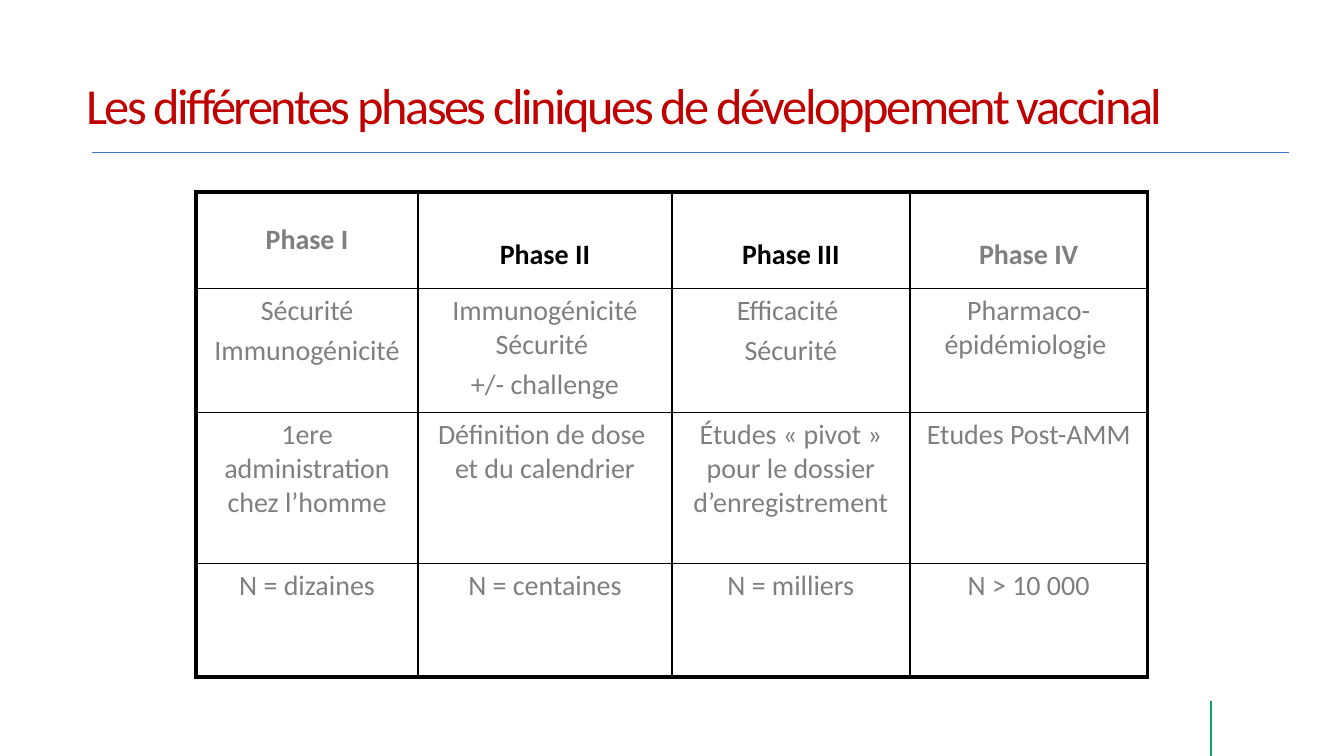
from lxml import etree
from pptx import Presentation, util as u
from pptx.dml.color import RGBColor
from pptx.enum import shapes, text
from pptx.oxml import ns

INK = {"red": "C00000", "gray": "7F7F7F", "black": "000000",
       "blue": "4472C4", "green": "15A160"}
ROWS = [
    [["Phase I"], ["Phase II"], ["Phase III"], ["Phase IV"]],
    [["Sécurité", "Immunogénicité"], ["Immunogénicité Sécurité ", "+/- challenge"],
     ["Efficacité ", "Sécurité"], ["Pharmaco-épidémiologie "]],
    [["1ere administration chez l’homme"], ["Définition de dose  et du calendrier"],
     ["Études « pivot » pour le dossier d’enregistrement"], ["Etudes Post-AMM"]],
    [["N = dizaines"], ["N = centaines"], ["N = milliers"], ["N > 10 000"]],
]


def write(frame, lines, size=15, ink="gray", bold=False, side="CENTER",
          gap=3, lead=1, track=0):
    for n, line in enumerate(lines):
        par = frame.paragraphs[0] if n == 0 else frame.add_paragraph()
        par.alignment = getattr(text.PP_ALIGN, side)
        par.space_before, par.line_spacing = u.Pt(gap), lead
        run = par.add_run()
        run.text = line
        font = run.font
        font.name, font.size, font.bold = "Calibri", u.Pt(size), bold
        font.color.rgb = RGBColor.from_string(INK[ink])
        if track:
            run._r.get_or_add_rPr().set("spc", str(track))


class Deck:
    def __init__(self):
        self.prs = Presentation()
        self.prs.slide_width = u.Inches(10)
        self.prs.slide_height = self.prs.slide_width * 9 // 16
        self.slide = self.prs.slides.add_slide(self.prs.slide_layouts[5])

    def wide(self, part):
        return round(self.prs.slide_width * part / 100)

    def high(self, part):
        return round(self.prs.slide_height * part / 100)

    def title(self, line, x, y, w, h):
        box = self.slide.shapes.title
        box.left, box.top = self.wide(x), self.high(y)
        box.width, box.height = self.wide(w), self.high(h)
        frame = box.text_frame
        frame.vertical_anchor = text.MSO_ANCHOR.MIDDLE
        write(frame, [line], size=27, ink="red", side="LEFT",
              gap=0, lead=0.9, track=-130)

    def rule(self, x1, y1, x2, y2, ink, size):
        line = self.slide.shapes.add_connector(
            shapes.MSO_CONNECTOR.STRAIGHT, self.wide(x1), self.high(y1),
            self.wide(x2), self.high(y2))
        line.line.color.rgb = RGBColor.from_string(INK[ink])
        line.line.width = u.Pt(size)
        etree.SubElement(line._element.spPr, ns.qn("a:effectLst"))

    def edge(self, cell, side, size):
        line = etree.SubElement(cell._tc.get_or_add_tcPr(), ns.qn("a:ln" + side),
                                w=str(u.Pt(size)))
        fill = etree.SubElement(line, ns.qn("a:solidFill"))
        etree.SubElement(fill, ns.qn("a:srgbClr"), val=INK["black"])

    def table(self, rows, x, y, cols, highs):
        grid = self.slide.shapes.add_table(
            len(rows), len(cols), self.wide(x), self.high(y),
            self.wide(sum(cols)), self.high(sum(highs))).table
        grid.first_row = grid.horz_banding = False
        for col, part in zip(grid.columns, cols):
            col.width = self.wide(part)
        for row, part in zip(grid.rows, highs):
            row.height = self.high(part)
        for r, row in enumerate(rows):
            for c, lines in enumerate(row):
                cell = grid.cell(r, c)
                rims = {"L": c == 0, "R": c == len(cols) - 1,
                        "T": r == 0, "B": r == len(rows) - 1}
                for side, rim in rims.items():
                    self.edge(cell, side, 2.25 if rim else 1)
                cell.fill.background()
                cell.margin_left = cell.margin_right = u.Inches(0.07)
                low = r == 0 and c > 0
                cell.margin_top = u.Inches(0.34 if low else 0.04)
                cell.margin_bottom = u.Inches(0.04)
                mid = r == 0 and c == 0
                cell.vertical_anchor = (text.MSO_ANCHOR.MIDDLE if mid
                                        else text.MSO_ANCHOR.TOP)
                main = r == 0 and c in (1, 2)
                write(cell.text_frame, lines, bold=r == 0,
                      ink="black" if main else "gray")


def main():
    deck = Deck()
    deck.rule(90.1, 100, 90.1, 92.7, "green", 1)
    deck.rule(6.88, 20.15, 95.9, 20.15, "blue", 0.5)
    deck.title("Les différentes phases cliniques de développement vaccinal",
               5.4, 5.9, 90.2, 16.9)
    deck.table(ROWS, 14.6, 25.4, [16.5, 18.9, 17.7, 17.7],
               [12.75, 16.4, 20, 15])
    deck.prs.save("out.pptx")


if __name__ == "__main__":
    main()
